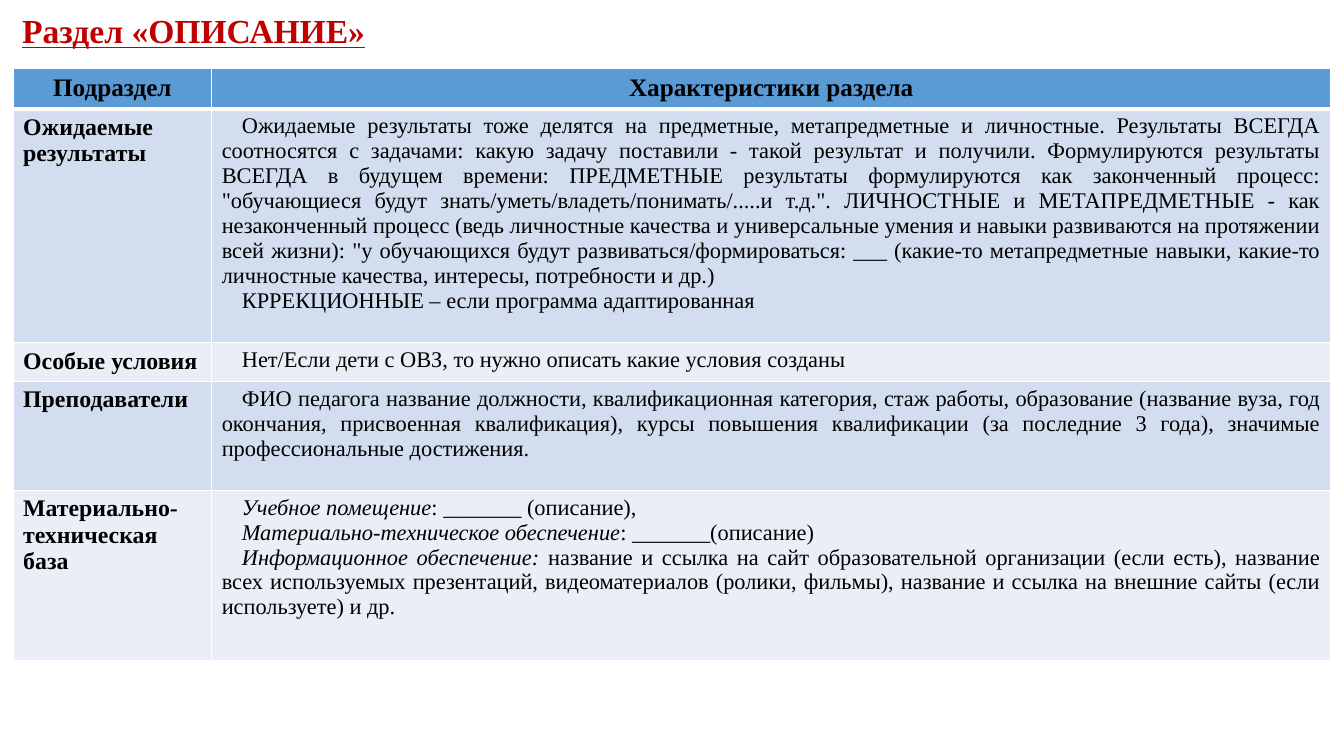
from lxml import etree
from pptx import Presentation
from pptx.dml.color import RGBColor
from pptx.enum.text import MSO_ANCHOR, PP_ALIGN
from pptx.oxml.ns import qn
from pptx.util import Inches, Pt

CENTER, JUSTIFY = PP_ALIGN.CENTER, PP_ALIGN.JUSTIFY
TOP, MIDDLE = MSO_ANCHOR.TOP, MSO_ANCHOR.MIDDLE

FONT = "Times New Roman"
BLACK, RED, WHITE = "000000", "C00000", "FFFFFF"
HEADER_FILL = "5B9BD5"
BAND_FILLS = ["D2DEEF", "EAEFF7"]
COL_WIDTHS = [1.97, 11.1]
ROW_HEIGHTS = [0.37, 2.32, 0.37, 1.08, 1.69]

HEADERS = ["Подраздел", "Характеристики раздела"]
# Each section: name, then paragraphs as (italic lead, plain text)
SECTIONS = [
    ("Ожидаемые результаты", [
        ("", "Ожидаемые результаты тоже делятся на предметные, метапредметные и личностные. "
             "Результаты ВСЕГДА соотносятся с задачами: какую задачу поставили - такой результат "
             "и получили. Формулируются результаты ВСЕГДА в будущем времени: ПРЕДМЕТНЫЕ результаты "
             "формулируются как законченный процесс: \"обучающиеся будут "
             "знать/уметь/владеть/понимать/.....и т.д.\". ЛИЧНОСТНЫЕ и МЕТАПРЕДМЕТНЫЕ - как "
             "незаконченный процесс (ведь личностные качества и универсальные умения и навыки "
             "развиваются на протяжении всей жизни): \"у обучающихся будут "
             "развиваться/формироваться: ___ (какие-то метапредметные навыки, какие-то личностные "
             "качества, интересы, потребности и др.)"),
        ("", "КРРЕКЦИОННЫЕ – если программа адаптированная"),
    ]),
    ("Особые условия", [
        ("", "Нет/Если дети с ОВЗ, то нужно описать какие условия созданы"),
    ]),
    ("Преподаватели", [
        ("", "ФИО педагога название должности, квалификационная категория, стаж работы, "
             "образование (название вуза, год окончания, присвоенная квалификация), курсы "
             "повышения квалификации (за последние 3 года), значимые профессиональные достижения."),
    ]),
    ("Материально-техническая база", [
        ("Учебное помещение", ": _______ (описание),"),
        ("Материально-техническое обеспечение", ": _______(описание)"),
        ("Информационное обеспечение: ",
         "название и ссылка на сайт образовательной организации (если есть), название всех "
         "используемых презентаций, видеоматериалов (ролики, фильмы), название и ссылка на "
         "внешние сайты (если используете) и др."),
    ]),
]


def add_run(p, text, size, color=BLACK, bold=False, italic=False):
    r = p.add_run()
    r.text = text
    r.font.name, r.font.size = FONT, Pt(size)
    r.font.bold, r.font.italic = bold, italic
    r.font.color.rgb = RGBColor.from_string(color)
    return r


def style_cell(cell, fill, bottom_width=1):
    """Set white borders, then the fill, in the order the schema requires."""
    tc_pr = cell._tc.get_or_add_tcPr()
    for side, width in (("L", 1), ("R", 1), ("T", 1), ("B", bottom_width)):
        ln = etree.SubElement(tc_pr, qn(f"a:ln{side}"), w=str(Pt(width)))
        solid = etree.SubElement(ln, qn("a:solidFill"))
        etree.SubElement(solid, qn("a:srgbClr"), val=WHITE)
    cell.fill.solid()
    cell.fill.fore_color.rgb = RGBColor.from_string(fill)
    cell.vertical_anchor = TOP


prs = Presentation()
prs.slide_width, prs.slide_height = Inches(13.33), Inches(7.5)
s = prs.slides.add_slide(prs.slide_layouts[6])

# Title
title = s.shapes.add_textbox(Inches(0.15), Inches(0.06), Inches(4.2), Inches(0.48))
tf = title.text_frame
tf.word_wrap = True
tf.vertical_anchor = MIDDLE
tf.margin_left = tf.margin_right = Inches(0.07)
tf.margin_top = tf.margin_bottom = Inches(0.04)
add_run(tf.paragraphs[0], "Раздел «ОПИСАНИЕ»", 24, RED, bold=True).font.underline = True

# Table grid
table = s.shapes.add_table(
    len(ROW_HEIGHTS), len(COL_WIDTHS), Inches(0.13), Inches(0.68),
    Inches(sum(COL_WIDTHS)), Inches(sum(ROW_HEIGHTS))).table
for col, width in zip(table.columns, COL_WIDTHS):
    col.width = Inches(width)
for row, height in zip(table.rows, ROW_HEIGHTS):
    row.height = Inches(height)

# Header row
for cell, header in zip(table.rows[0].cells, HEADERS):
    style_cell(cell, HEADER_FILL, bottom_width=3)
    p = cell.text_frame.paragraphs[0]
    p.alignment = CENTER
    add_run(p, header, 18, bold=True)

# Section rows
for i, (name, paragraphs) in enumerate(SECTIONS):
    name_cell, text_cell = table.rows[i + 1].cells
    for cell in (name_cell, text_cell):
        style_cell(cell, BAND_FILLS[i % 2])
    p = name_cell.text_frame.paragraphs[0]
    p.alignment = JUSTIFY
    add_run(p, name, 17, bold=True)

    tf = text_cell.text_frame
    for j, (lead, text) in enumerate(paragraphs):
        p = tf.add_paragraph() if j else tf.paragraphs[0]
        p.alignment = JUSTIFY
        p_pr = p._p.get_or_add_pPr()
        p_pr.set("marL", "0")
        p_pr.set("indent", str(Inches(0.2)))
        if lead:
            add_run(p, lead, 16, italic=True)
        add_run(p, text, 16)

prs.save("out.pptx")
